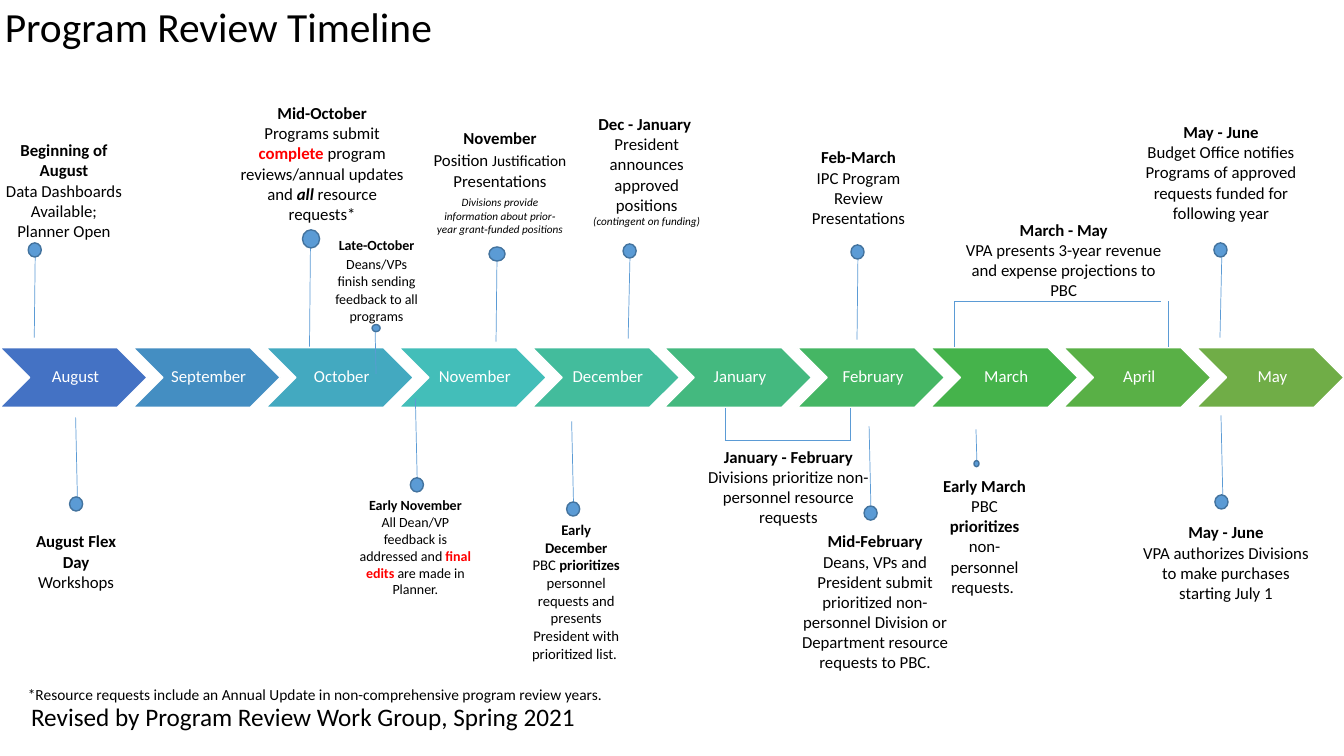
from pptx import Presentation
from pptx import util as u
from pptx.dml.color import RGBColor
from pptx.enum import shapes, text
from pptx.oxml import xmlchemy

PX = 9144  # EMU per px, 100 px to the inch
FONT = "Calibri"
COLORS = {"text": "000000", "white": "FFFFFF", "alert": "FF0000",
          "line": "5B9BD5", "dot_edge": "43739E"}
MONTHS = {"August": "4472C4", "September": "448EC2", "October": "43A9C0",
          "November": "43BEB9", "December": "43BC9C", "January": "44B97F",
          "February": "45B664", "March": "45B34B", "April": "59B046",
          "May": "70AD47"}
RUN_STYLES = {
    "plain": {},
    "bold": {"bold": True},
    "alert": {"bold": True, "color": "alert"},
    "stress": {"bold": True, "italic": True},
    "smaller": {"size": 11},
    "caption": {"size": 8, "italic": True},
}
LOOSE = {"line_spacing": 1.04, "space_before": u.Pt(0.9)}

# Line ends, from the timeline to the dot
BRACKETS = [
    (843, 389, 843, 437), (719, 392, 719, 437), (719, 437, 844, 437),
    (947, 347, 947, 299), (1159, 299, 1159, 348), (947, 299, 1152, 299),
]
# Line ends, then the dot's left, top, width, height
PINS = [
    ((850, 337, 851, 248), (844, 243, 13, 14)),
    ((862, 423, 864, 512), (857, 502, 13, 14)),
    ((1211, 412, 1213, 501), (1205, 491, 13, 14)),
    ((1210, 335, 1212, 246), (1204, 241, 13, 14)),
    ((492, 339, 493, 250), (485, 245, 16, 14)),
    ((623, 336, 625, 247), (618, 242, 13, 14)),
    ((75, 414, 77, 503), (69, 493, 13, 14)),
    ((34, 335, 35, 246), (28, 241, 13, 14)),
    ((567, 418, 569, 507), (562, 498, 13, 14)),
    ((968, 426, 969, 461), (966, 457, 5, 6)),
    ((412, 395, 414, 484), (407, 474, 13, 14)),
    ((373, 371, 372, 325), (369, 322, 8, 7)),
    ((307, 344, 308, 234), (300, 228, 17, 18)),
]
# Box, text size, heading, paragraphs of runs
NOTES = [
    ((786, 141, 131, 91), 12, "Feb-March", [["IPC Program Review Presentations"]]),
    ((946, 213, 218, 91), 12, "March - May",
     [["VPA presents 3-year revenue and expense projections to PBC"]]),
    ((1121, 513, 190, 91), 12, "May - June",
     [["VPA authorizes Divisions to make purchases starting July 1"]]),
    ((1102, 116, 218, 111), 12, "May - June",
     [["Budget Office notifies Programs of approved requests funded for following year"]]),
    ((576, 108, 131, 125), 12, "Dec - January ",
     [["President announces approved positions"],
      [("(contingent on funding)", "caption")]]),
    ((16, 522, 119, 71), 12, "August Flex Day", [["Workshops"]]),
    ((-5, 134, 137, 111), 12, "Beginning of August",
     [["Data Dashboards Available;"], ["Planner Open"]]),
    ((517, 512, 109, 151), 10.5, "Early December",
     [["PBC ", ("prioritizes", "bold"),
       " personnel requests and presents President with prioritized list. "]]),
    ((225, 97, 189, 131), 12, "Mid-October",
     [["Programs submit ", ("complete", "alert"), " program reviews/annual updates and ",
       ("all", "stress"), " resource requests*"]]),
    ((776, 522, 184, 151), 12, "Mid-February",
     [["Deans, VPs and President submit prioritized non-personnel Division or "
       "Department resource requests to PBC."]]),
    ((342, 488, 140, 111), 10, "Early November",
     [["All Dean/VP feedback is addressed and ", ("final edits", "alert"),
       " are made in Planner."]]),
    ((690, 438, 184, 91), 12, "January - February",
     [["Divisions prioritize non-personnel resource requests"]]),
    ((919, 467, 115, 131), 12, "Early March",
     [["PBC ", ("prioritizes", "bold"), " non-personnel requests. "]]),
]
LOOSE_NOTES = [
    ((320, 229, 107, 98), 10, "Late-October",
     [["Deans/VPs finish sending feedback to all programs"]]),
    ((418, 121, 156, 140), 12, "November",
     [["Position ", ("Justification ", "smaller"), "Presentations"],
      [("Divisions provide\ninformation about prior‐\nyear grant‐funded positions",
        "caption")]]),
]


def rgb(name):
    return RGBColor.from_string(COLORS.get(name, name))


def emu(lengths):
    return [length * PX for length in lengths]


def apply(target, formats):
    for name, value in formats.items():
        setattr(target, name, value)


class TimelineSlide:
    def __init__(self, presentation):
        self.slide = presentation.slides.add_slide(presentation.slide_layouts[6])

    def line(self, ends):
        connector = self.slide.shapes.add_connector(
            shapes.MSO_CONNECTOR.STRAIGHT, *emu(ends))
        connector.line.color.rgb = rgb("line")
        connector.line.width = u.Pt(0.5)
        properties = connector._element.spPr
        properties.append(xmlchemy.OxmlElement("a:effectLst"))

    def shape(self, kind, box, fill, edge):
        shape = self.slide.shapes.add_shape(kind, *emu(box))
        shape.shadow.inherit = False
        shape.fill.solid()
        shape.fill.fore_color.rgb = rgb(fill)
        shape.line.color.rgb = rgb(edge)
        shape.line.width = u.Pt(1)
        return shape

    def pin(self, ends, dot):
        self.line(ends)
        self.shape(shapes.MSO_SHAPE.OVAL, dot, "line", "dot_edge")

    def run(self, paragraph, words, size, color="text", **formats):
        """Add words to the paragraph, with a line break at each newline."""
        for index, part in enumerate(words.split("\n")):
            if index:
                paragraph.add_line_break()
            run = paragraph.add_run()
            run.text = part
            run.font.color.rgb = rgb(color)
            apply(run.font, {"name": FONT, "size": u.Pt(size), **formats})

    def chevron(self, left, month, fill):
        shape = self.shape(shapes.MSO_SHAPE.CHEVRON, (left, 345, 146, 59), fill, "white")
        apply(shape.text_frame, {
            "margin_left": 5 * PX, "margin_right": PX, "margin_top": 2 * PX,
            "margin_bottom": 2 * PX, "word_wrap": False,
            "vertical_anchor": text.MSO_ANCHOR.MIDDLE})
        paragraph = shape.text_frame.paragraphs[0]
        apply(paragraph, {"alignment": text.PP_ALIGN.CENTER, "line_spacing": 0.9})
        self.run(paragraph, month, 12, "white")

    def text_box(self, box, **formats):
        frame = self.slide.shapes.add_textbox(*emu(box)).text_frame
        apply(frame, {"word_wrap": True, **formats})
        return frame

    def label(self, box, words, size, paragraph_formats, **frame_formats):
        paragraph = self.text_box(box, **frame_formats).paragraphs[0]
        apply(paragraph, paragraph_formats)
        self.run(paragraph, words, size)

    def note(self, box, size, heading, body, spacing):
        """Add a centred text box with a bold heading; return its text frame."""
        frame = self.text_box(box, auto_size=text.MSO_AUTO_SIZE.SHAPE_TO_FIT_TEXT)
        for index, runs in enumerate([[(heading, "bold")], *body]):
            paragraph = frame.add_paragraph() if index else frame.paragraphs[0]
            apply(paragraph, {"alignment": text.PP_ALIGN.CENTER, **spacing})
            for item in runs:
                words, style = (item, "plain") if isinstance(item, str) else item
                self.run(paragraph, words, **{"size": size, **RUN_STYLES[style]})
        return frame


def main():
    presentation = Presentation()
    apply(presentation, {"slide_width": 1333 * PX, "slide_height": 750 * PX})
    timeline = TimelineSlide(presentation)

    for ends in BRACKETS:
        timeline.line(ends)
    for index, (month, fill) in enumerate(MONTHS.items()):
        timeline.chevron(round(index * 1187 / 9), month, fill)
    for ends, dot in PINS:
        timeline.pin(ends, dot)
    for note in NOTES:
        timeline.note(*note, spacing={})
    for note in LOOSE_NOTES:
        frame = timeline.note(*note, spacing=LOOSE)
    november_caption = frame.paragraphs[-1]
    apply(november_caption, {"line_spacing": 1.01, "space_before": u.Pt(3.2)})

    timeline.label((-5, 4, 750, 53), "Program Review Timeline", 29.6,
                   {"line_spacing": 0.8}, vertical_anchor=text.MSO_ANCHOR.MIDDLE)
    timeline.label((3, 675, 623, 29),
                   "*Resource requests include an Annual Update in "
                   "non-comprehensive program review years. ", 11,
                   {"alignment": text.PP_ALIGN.CENTER})
    timeline.label((21, 691, 566, 40),
                   "Revised by Program Review Work Group, Spring 2021", 18, {},
                   word_wrap=False)
    presentation.save("out.pptx")


if __name__ == "__main__":
    main()
